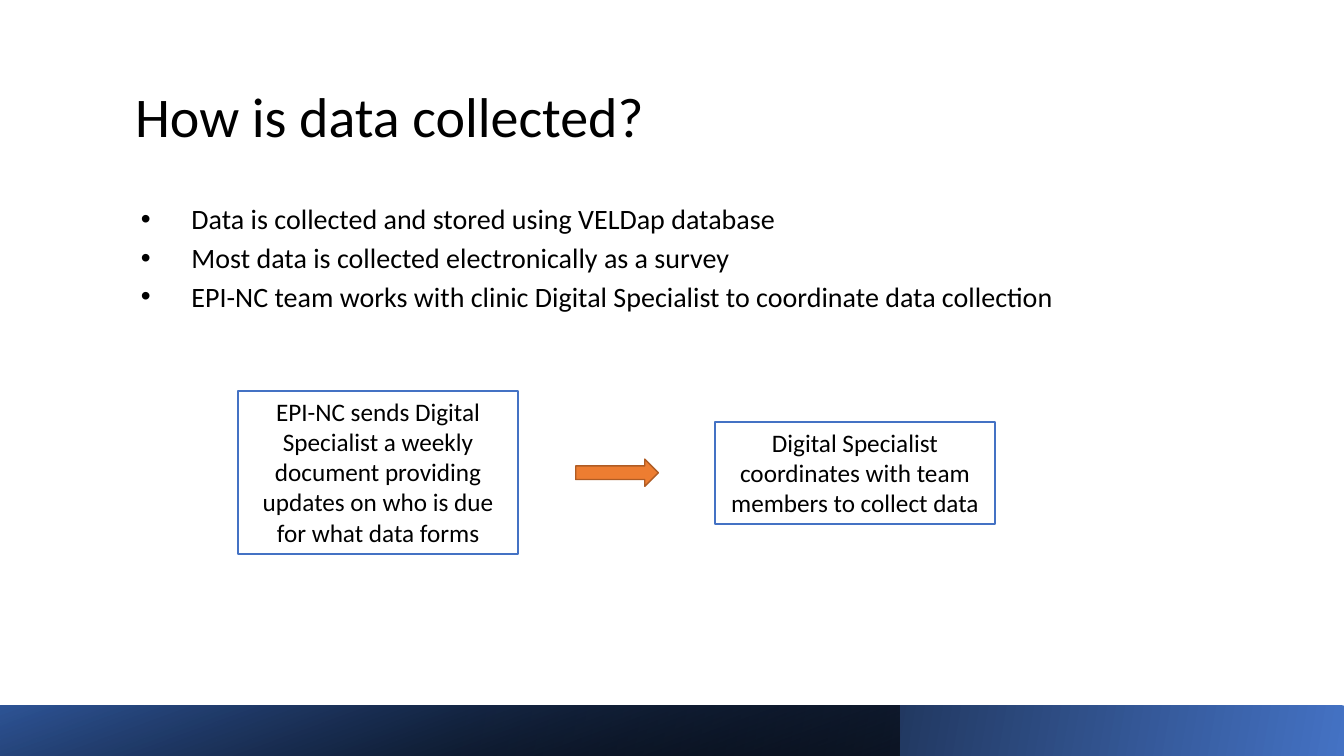
from lxml.etree import SubElement
from pptx import Presentation
from pptx.dml.color import RGBColor
from pptx.enum.shapes import MSO_SHAPE as Shape
from pptx.enum.text import MSO_ANCHOR as Anchor, MSO_AUTO_SIZE as AutoSize, PP_ALIGN as Align
from pptx.oxml.ns import qn
from pptx.util import Inches, Pt

COLORS = {
    "text": "000000",
    "blue": "4472C4",
    "navy": "2F5597",
    "orange": "ED7D31",
    "rust": "AF5C24",
}
RGB = {name: RGBColor.from_string(value) for name, value in COLORS.items()}

deck = Presentation()
deck.slide_width, deck.slide_height = Inches(13.33), Inches(7.5)
slide = deck.slides.add_slide(deck.slide_layouts[5])
shapes = slide.shapes


def write(frame, lines, size, align=Align.LEFT, anchor=Anchor.TOP, spacing=1.0, after=0, bullet=False):
    frame.word_wrap = True
    frame.auto_size = AutoSize.NONE
    frame.vertical_anchor = anchor
    for index, line in enumerate(lines):
        paragraph = frame.add_paragraph() if index else frame.paragraphs[0]
        paragraph.alignment = align
        paragraph.line_spacing = spacing
        paragraph.space_before, paragraph.space_after = Pt(0), Pt(after)
        run = paragraph.add_run()
        run.text = line
        run.font.name, run.font.size = "Calibri", Pt(size)
        run.font.color.rgb = RGB["text"]
        if bullet:
            props = paragraph._p.get_or_add_pPr()
            props.set("marL", str(Inches(0.56)))
            props.set("indent", str(Inches(-0.5)))
            SubElement(props, qn("a:buFont"), typeface="Arial")
            SubElement(props, qn("a:buChar"), char="•")


def add_block(kind, left, top, width, height):
    block = shapes.add_shape(kind, Inches(left), Inches(top), Inches(width), Inches(height))
    block.shadow.inherit = False
    return block


title = shapes.title
title.left, title.top, title.width, title.height = map(Inches, (1.24, 0.5, 6.36, 1.03))
write(title.text_frame, ["How is data collected?"], 40, anchor=Anchor.BOTTOM, spacing=0.9, after=6)

FOOTER_BANDS = [
    (13.33, 170, [("blue", 0, 100), ("text", 0.66, 100)]),
    (8.92, 110, [("text", 0, 63), ("navy", 1, 100)]),
]
for width, angle, stops in FOOTER_BANDS:
    band = add_block(Shape.RECTANGLE, 0, 7, width, 0.5)
    band.line.fill.background()
    band.fill.gradient()
    band.fill.gradient_angle = angle
    for stop, (color, position, _) in zip(band.fill.gradient_stops, stops):
        stop.color.rgb = RGB[color]
        stop.position = position
    for tint, (_, _, opacity) in zip(band._element.spPr.iter(qn("a:srgbClr")), stops):
        if opacity < 100:
            SubElement(tint, qn("a:alpha"), val=str(opacity * 1000))

collection_points = shapes.add_textbox(Inches(1.24), Inches(1.99), Inches(10.58), Inches(3.79))
write(
    collection_points.text_frame,
    [
        "Data is collected and stored using VELDap database",
        "Most data is collected electronically as a survey",
        "EPI-NC team works with clinic Digital Specialist to coordinate data collection",
    ],
    20, spacing=0.9, after=6, bullet=True,
)

FLOW_MIDDLE, STEP_WIDTH = 4.69, 2.78
STEPS = [
    (2.36, 1.62, "EPI-NC sends Digital Specialist a weekly document providing updates on who is due for what data forms"),
    (7.09, 1.01, "Digital Specialist coordinates with team members to collect data"),
]
for left, height, wording in STEPS:
    step = add_block(Shape.RECTANGLE, left, FLOW_MIDDLE - height / 2, STEP_WIDTH, height)
    step.fill.background()
    step.line.color.rgb, step.line.width = RGB["blue"], Pt(1.5)
    write(step.text_frame, [wording], 18, align=Align.CENTER)

handover = add_block(Shape.RIGHT_ARROW, 5.71, FLOW_MIDDLE - 0.27 / 2, 0.82, 0.27)
handover.fill.solid()
handover.fill.fore_color.rgb = RGB["orange"]
handover.line.color.rgb, handover.line.width = RGB["rust"], Pt(1)

deck.save("out.pptx")
